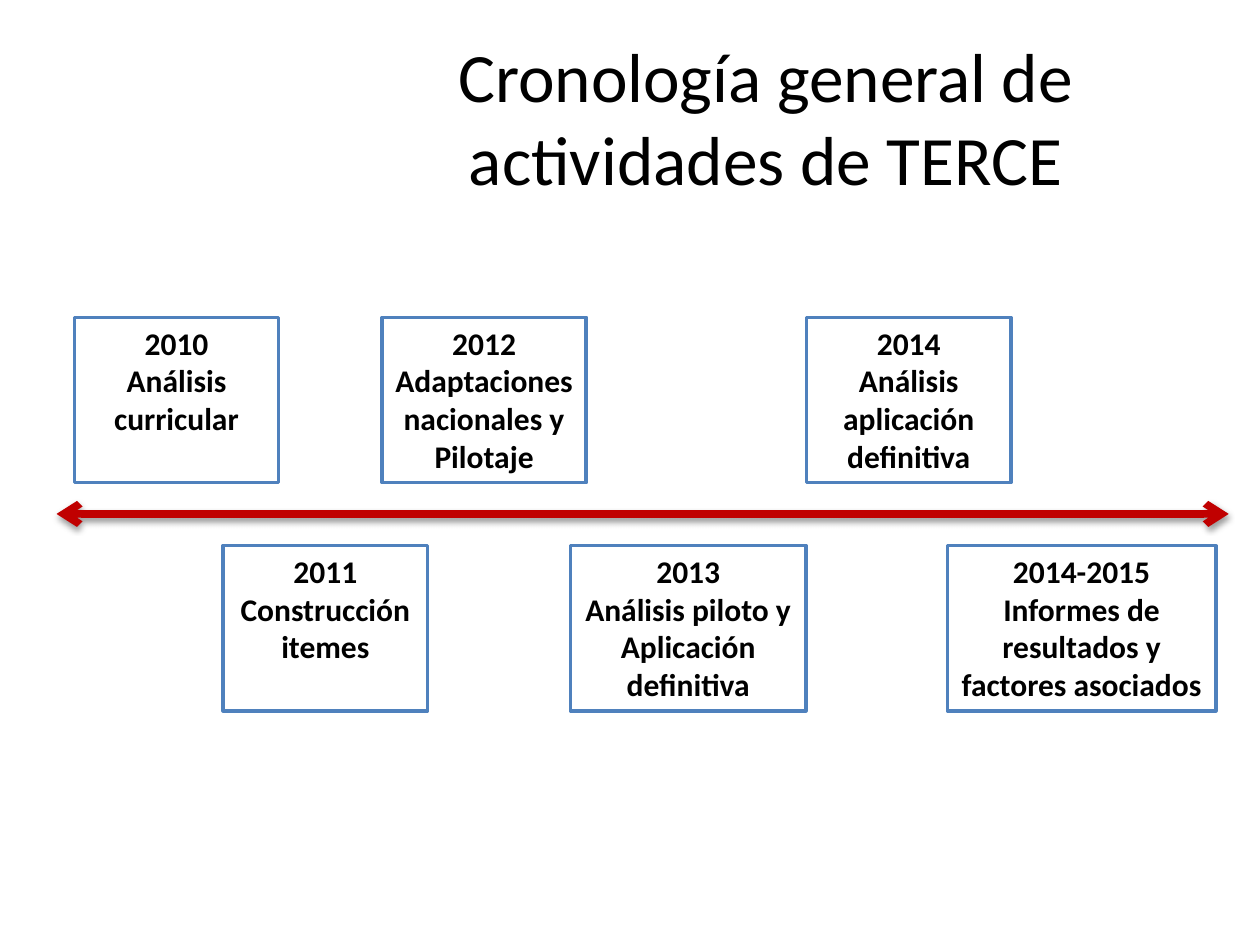
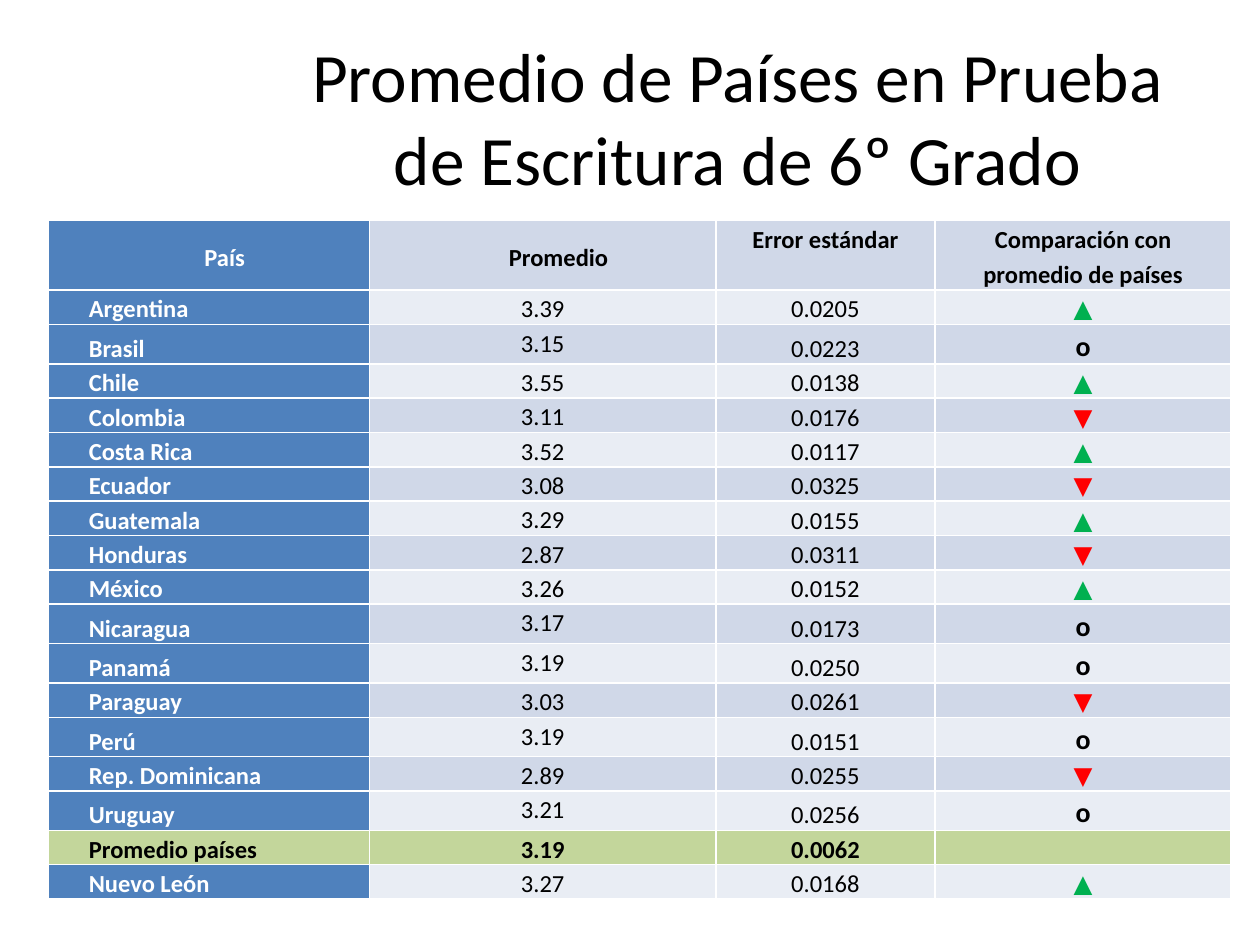
from dataclasses import dataclass

from lxml.etree import SubElement
from pptx import Presentation
from pptx.dml.color import RGBColor
from pptx.enum.shapes import MSO_CONNECTOR, MSO_SHAPE
from pptx.enum.text import MSO_ANCHOR, MSO_AUTO_SIZE, PP_ALIGN
from pptx.oxml.ns import qn
from pptx.util import Cm, Pt


@dataclass(frozen=True)
class Theme:
    font: str = "Calibri"
    black: str = "000000"
    white: str = "FFFFFF"
    blue: str = "4F81BD"
    band_dark: str = "D0D8E8"
    band_light: str = "E9EDF4"
    total: str = "C3D69B"
    arrow: str = "C00000"
    above: str = "00B050"
    below: str = "FF0000"
    title_size: float = 39.6
    box_size: float = 18
    table_size: float = 14
    mark_size: float = 16


THEME = Theme()
TITLE_ONLY = 5

# Year, activity, left and width in cm; boxes alternate above and below the arrow
ACTIVITIES = [
    ("2010", "Análisis curricular", 1.5, 4.12),
    ("2011", "Construcción itemes", 4.5, 4.12),
    ("2012", "Adaptaciones nacionales y Pilotaje", 7.7, 4.12),
    ("2013", "Análisis piloto y Aplicación definitiva", 11.5, 4.75),
    ("2014", "Análisis aplicación definitiva", 16.26, 4.12),
    ("2014-2015", "Informes de resultados y factores asociados", 19.1, 5.41),
]
BOX_TOPS = (6.4, 11)
BOX_HEIGHT = 3.33

HEADINGS = ("País", "Promedio", "Error estándar", "Comparación con promedio de países")
TOTAL_NAME = "Promedio países"
UP, SAME, DOWN = "▲", "o", "▼"
RESULTS = [
    ("Argentina", "3.39", "0.0205", UP),
    ("Brasil", "3.15", "0.0223", SAME),
    ("Chile", "3.55", "0.0138", UP),
    ("Colombia", "3.11", "0.0176", DOWN),
    ("Costa Rica", "3.52", "0.0117", UP),
    ("Ecuador", "3.08", "0.0325", DOWN),
    ("Guatemala", "3.29", "0.0155", UP),
    ("Honduras", "2.87", "0.0311", DOWN),
    ("México", "3.26", "0.0152", UP),
    ("Nicaragua", "3.17", "0.0173", SAME),
    ("Panamá", "3.19", "0.0250", SAME),
    ("Paraguay", "3.03", "0.0261", DOWN),
    ("Perú", "3.19", "0.0151", SAME),
    ("Rep. Dominicana", "2.89", "0.0255", DOWN),
    ("Uruguay", "3.21", "0.0256", SAME),
    (TOTAL_NAME, "3.19", "0.0062", ""),
    ("Nuevo León", "3.27", "0.0168", UP),
]
MARK_COLORS = {UP: THEME.above, DOWN: THEME.below}
COLUMN_WIDTHS = (6.48, 6.98, 4.42, 5.97)
HEADING_ANCHORS = (MSO_ANCHOR.MIDDLE, MSO_ANCHOR.MIDDLE, MSO_ANCHOR.TOP, MSO_ANCHOR.MIDDLE)
RESULT_ANCHORS = (MSO_ANCHOR.BOTTOM, MSO_ANCHOR.TOP, MSO_ANCHOR.BOTTOM, MSO_ANCHOR.MIDDLE)


def rgb(color):
    return RGBColor.from_string(color)


def format_paragraph(p, size, color=THEME.black, bold=False, align=PP_ALIGN.CENTER):
    p.alignment = align
    p.font.name = THEME.font
    p.font.size = Pt(size)
    p.font.bold = bold
    p.font.color.rgb = rgb(color)


def add_titled_slide(prs, title, left, width):
    slide = prs.slides.add_slide(prs.slide_layouts[TITLE_ONLY])
    sp = slide.shapes.title
    sp.left, sp.top, sp.width, sp.height = Cm(left), Cm(0.76), Cm(width), Cm(3.18)
    tf = sp.text_frame
    tf.text = title
    tf.auto_size = MSO_AUTO_SIZE.NONE
    tf.vertical_anchor = MSO_ANCHOR.MIDDLE
    format_paragraph(tf.paragraphs[0], THEME.title_size)
    return slide


def add_activity_box(slide, year, activity, left, top, width):
    sp = slide.shapes.add_shape(
        MSO_SHAPE.RECTANGLE, Cm(left), Cm(top), Cm(width), Cm(BOX_HEIGHT))
    sp.shadow.inherit = False
    sp.fill.background()
    sp.line.color.rgb = rgb(THEME.blue)
    sp.line.width = Pt(2)
    tf = sp.text_frame
    tf.word_wrap = True
    tf.auto_size = MSO_AUTO_SIZE.SHAPE_TO_FIT_TEXT
    tf.vertical_anchor = MSO_ANCHOR.TOP
    tf.text = f"{year}\n{activity}"
    for p in tf.paragraphs:
        format_paragraph(p, THEME.box_size, bold=True)


def add_time_arrow(slide, left, right, y):
    """Draw a double-headed line with a soft shadow below it."""
    line = slide.shapes.add_connector(
        MSO_CONNECTOR.STRAIGHT, Cm(left), Cm(y), Cm(right), Cm(y))
    line.line.color.rgb = rgb(THEME.arrow)
    line.line.width = Pt(4.25)
    ln = line.line._get_or_add_ln()
    for end in ("a:headEnd", "a:tailEnd"):
        SubElement(ln, qn(end), type="arrow")
    effects = SubElement(line._element.spPr, qn("a:effectLst"))
    shadow = SubElement(effects, qn("a:outerShdw"), blurRad=str(Pt(3.1)),
                        dist=str(Pt(1.6)), dir="5400000", rotWithShape="0")
    shade = SubElement(shadow, qn("a:srgbClr"), val=THEME.black)
    SubElement(shade, qn("a:alpha"), val="38000")


def set_borders(cell):
    tc_pr = cell._tc.get_or_add_tcPr()
    for side in ("a:lnL", "a:lnR", "a:lnT", "a:lnB"):
        ln = SubElement(tc_pr, qn(side), w=str(Pt(1)))
        SubElement(SubElement(ln, qn("a:solidFill")), qn("a:srgbClr"), val=THEME.white)


def fill_cell(cell, text, fill, anchor, indent=False, **style):
    set_borders(cell)
    cell.fill.solid()
    cell.fill.fore_color.rgb = rgb(fill)
    cell.margin_left = cell.margin_right = Cm(0.18)
    cell.margin_top = cell.margin_bottom = 0
    cell.vertical_anchor = anchor
    cell.text = text
    p = cell.text_frame.paragraphs[0]
    p.line_spacing = 1.15
    if indent:
        p._p.get_or_add_pPr().set("marL", str(Cm(0.64)))
    format_paragraph(p, **style)
    if not text:
        SubElement(p._p, qn("a:endParaRPr"), sz=str(int(style["size"] * 100)))


def fill_heading_row(table):
    for col, (text, anchor) in enumerate(zip(HEADINGS, HEADING_ANCHORS)):
        is_country = col == 0
        fill_cell(table.cell(0, col), text,
                  THEME.blue if is_country else THEME.band_dark, anchor,
                  indent=col < 2, size=THEME.table_size, bold=True,
                  color=THEME.white if is_country else THEME.black)


def fill_result_row(table, row, result):
    is_total = result[0] == TOTAL_NAME
    band = THEME.band_light if row % 2 else THEME.band_dark
    for col, (text, anchor) in enumerate(zip(result, RESULT_ANCHORS)):
        is_country = col == 0
        is_same = text == SAME
        fill = THEME.total if is_total else THEME.blue if is_country else band
        color = THEME.white if is_country and not is_total else THEME.black
        fill_cell(table.cell(row, col), text, fill, anchor, indent=is_country,
                  size=THEME.mark_size if is_same else THEME.table_size,
                  bold=is_country or is_total or is_same,
                  color=MARK_COLORS.get(text, color),
                  align=PP_ALIGN.LEFT if is_country else PP_ALIGN.CENTER)


def add_results_table(slide):
    table = slide.shapes.add_table(
        len(RESULTS) + 1, len(HEADINGS), Cm(0.97), Cm(4.45),
        Cm(sum(COLUMN_WIDTHS)), Cm(13.46)).table
    table.first_row = table.horz_banding = False
    for column, width in zip(table.columns, COLUMN_WIDTHS):
        column.width = Cm(width)
    table.rows[0].height = Cm(1.4)
    fill_heading_row(table)
    for row, result in enumerate(RESULTS, start=1):
        table.rows[row].height = Cm(0.74 if SAME in result else 0.69)
        fill_result_row(table, row, result)


def build_timeline_slide(prs):
    slide = add_titled_slide(prs, "Cronología general de actividades de TERCE", 6.1, 18.67)
    for i, (year, activity, left, width) in enumerate(ACTIVITIES):
        add_activity_box(slide, year, activity, left, BOX_TOPS[i % 2], width)
    add_time_arrow(slide, 1.14, 24.77, 10.36)


def build_results_slide(prs):
    slide = add_titled_slide(
        prs, "Promedio de Países en Prueba de Escritura de 6º Grado", 5.61, 18.52)
    add_results_table(slide)


def main():
    prs = Presentation()
    prs.slide_width, prs.slide_height = Cm(25.4), Cm(19.05)
    build_timeline_slide(prs)
    build_results_slide(prs)
    prs.save("out.pptx")


if __name__ == "__main__":
    main()
